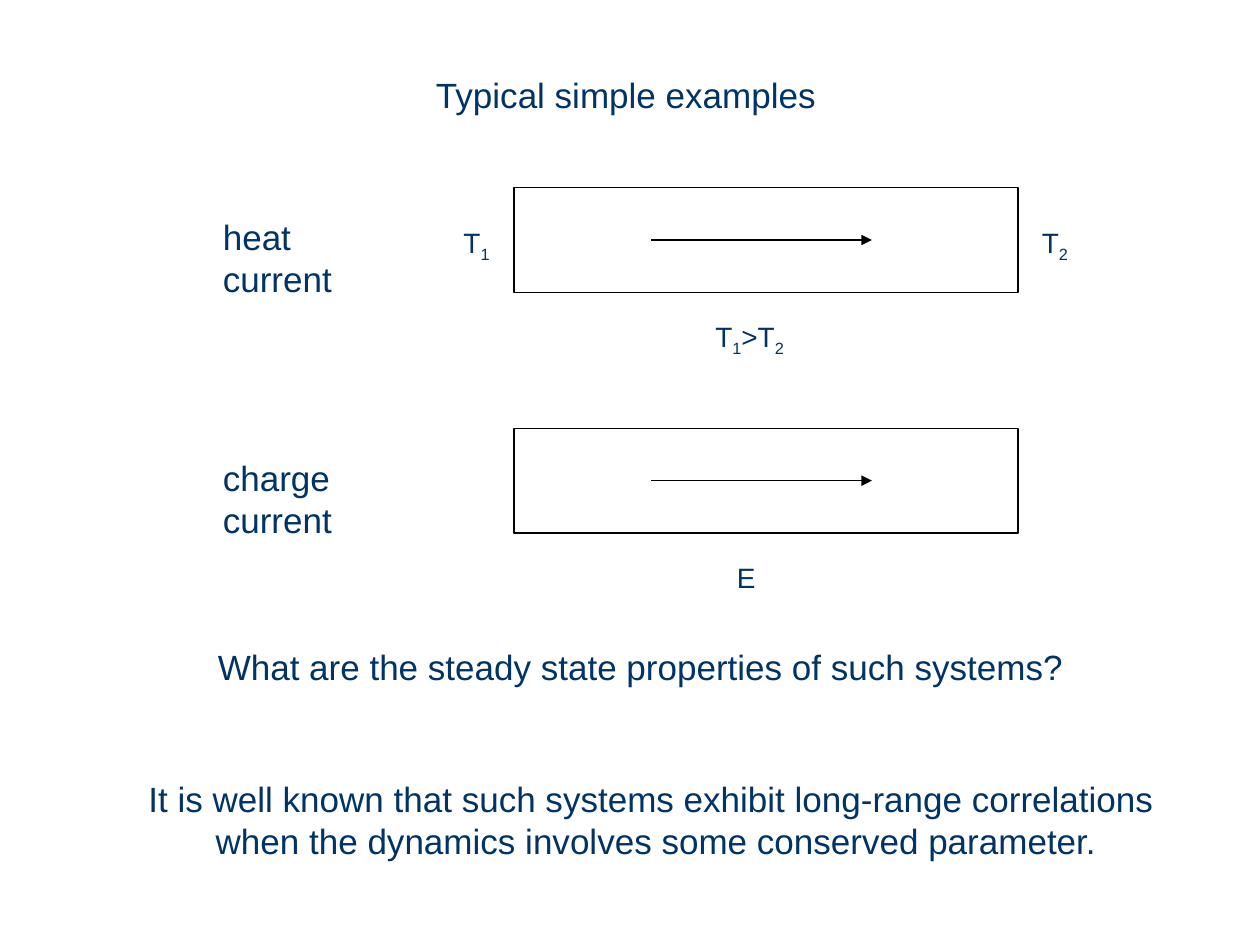
from dataclasses import dataclass

import lxml.etree
import pptx
import pptx.dml.color
import pptx.enum.shapes
import pptx.enum.text
import pptx.oxml.ns
import pptx.util

Inches = pptx.util.Inches
ALIGN = pptx.enum.text.PP_ALIGN


@dataclass(frozen=True)
class Theme:
    font: str = "Arial"
    text: pptx.dml.color.RGBColor = pptx.dml.color.RGBColor(0x00, 0x33, 0x66)
    line: pptx.dml.color.RGBColor = pptx.dml.color.RGBColor(0, 0, 0)
    statement_size: pptx.util.Pt = pptx.util.Pt(20)
    symbol_size: pptx.util.Pt = pptx.util.Pt(16)
    line_width: pptx.util.Pt = pptx.util.Pt(0.75)


THEME = Theme()


def write(frame, lines, size, align=ALIGN.LEFT, wrap=False):
    """Fill a text frame; digits after an underscore become subscripts."""
    frame.word_wrap = wrap
    frame.auto_size = pptx.enum.text.MSO_AUTO_SIZE.NONE
    frame.vertical_anchor = pptx.enum.text.MSO_ANCHOR.TOP
    for index, line in enumerate(lines):
        paragraph = frame.add_paragraph() if index else frame.paragraphs[0]
        paragraph.alignment = align
        paragraph.font.name = THEME.font
        paragraph.font.size = size
        paragraph.font.color.rgb = THEME.text
        first, *rest = line.split("_")
        paragraph.add_run().text = first
        for part in rest:
            subscript = paragraph.add_run()
            subscript.text = part[0]
            subscript.font._element.set("baseline", "-25000")
            if part[1:]:
                paragraph.add_run().text = part[1:]


def add_text(slide, box, lines, size, **options):
    frame = slide.shapes.add_textbox(*box).text_frame
    write(frame, lines, size, **options)
    return frame


def add_title(slide, box, wording):
    title = slide.shapes.title
    title.left, title.top, title.width, title.height = box
    write(title.text_frame, [wording], THEME.statement_size)


def add_current_arrow(slide, left, right, y):
    arrow = slide.shapes.add_connector(
        pptx.enum.shapes.MSO_CONNECTOR.STRAIGHT, left, y, right, y)
    arrow.line.color.rgb = THEME.line
    arrow.line.width = THEME.line_width
    properties = arrow._element.spPr
    head = lxml.etree.SubElement(arrow.line._get_or_add_ln(),
                                 pptx.oxml.ns.qn("a:tailEnd"))
    head.set("type", "triangle")
    lxml.etree.SubElement(properties, pptx.oxml.ns.qn("a:effectLst"))


def add_example(slide, box, name, name_width, symbols):
    """Draw one conductor with its name, its current and its symbols."""
    left, top, width, height = box
    conductor = slide.shapes.add_shape(
        pptx.enum.shapes.MSO_SHAPE.RECTANGLE, *box)
    conductor.shadow.inherit = False
    conductor.fill.background()
    conductor.line.color.rgb = THEME.line
    conductor.line.width = THEME.line_width

    add_current_arrow(slide, left + Inches(1.09), left + Inches(2.84),
                      top + height // 2)

    # Name, broken between its two words
    name_box = (left - Inches(2.41), top + Inches(0.17), name_width, Inches(0.43))
    name_frame = add_text(slide, name_box, [name], THEME.statement_size, wrap=True)
    name_frame.margin_right = Inches(0.3)

    # Symbols: offset from the conductor, and width
    for wording, x, y, symbol_width in symbols:
        symbol_box = (left + Inches(x), top + Inches(y),
                      Inches(symbol_width), Inches(0.37))
        add_text(slide, symbol_box, [wording], THEME.symbol_size)


def main():
    deck = pptx.Presentation()
    deck.slide_width, deck.slide_height = Inches(10), Inches(7.5)
    slide = deck.slides.add_slide(deck.slide_layouts[5])

    add_title(slide, (Inches(3.36), Inches(0.53), Inches(3.24), Inches(0.44)),
              "Typical simple examples")

    # Examples, stacked at an equal pitch
    examples = [
        ("heat current", Inches(1.68), [("T_1", -0.5, 0.25, 0.42),
                                        ("T_2", 4.09, 0.25, 0.42),
                                        ("T_1>T_2", 1.5, 1, 0.77)]),
        ("charge current", Inches(1.99), [("E", 1.67, 1, 0.35)]),
    ]
    for row, example in enumerate(examples):
        box = (Inches(4.08), Inches(1.49 + 1.91 * row), Inches(4), Inches(0.83))
        add_example(slide, box, *example)

    # Question and known result
    add_text(slide, (Inches(1.63), Inches(5.07), Inches(6.95), Inches(0.44)),
             ["What are the steady state properties of such systems?"],
             THEME.statement_size)
    add_text(slide, (Inches(1.05), Inches(6.12), Inches(8.24), Inches(0.77)),
             ["It is well known that such systems exhibit long-range correlations",
              " when the dynamics involves some conserved parameter."],
             THEME.statement_size, align=ALIGN.CENTER)

    deck.save("out.pptx")


if __name__ == "__main__":
    main()
